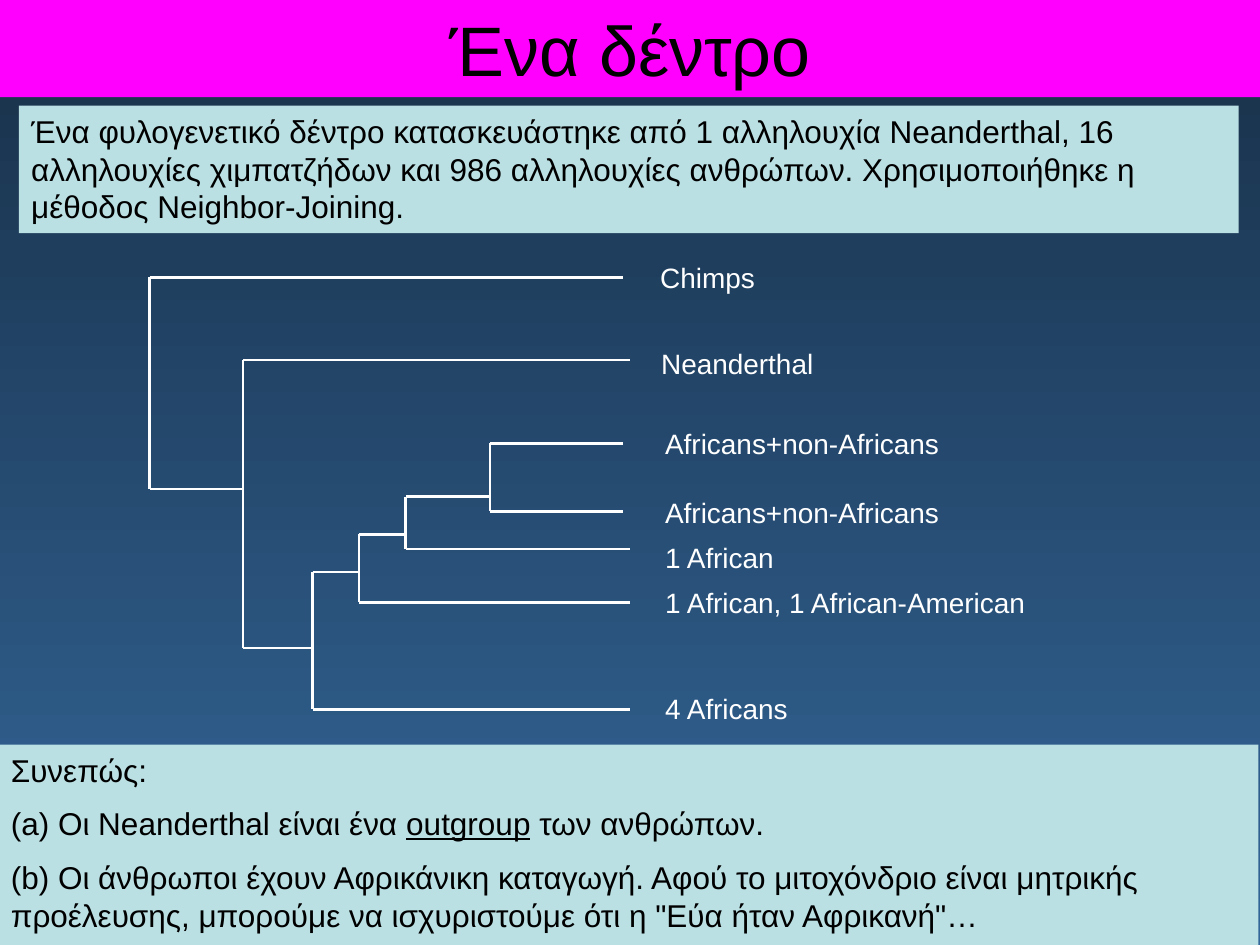
from pptx import Presentation
from pptx.dml.color import RGBColor
from pptx.enum.shapes import MSO_CONNECTOR
from pptx.enum.text import MSO_ANCHOR, PP_ALIGN
from pptx.oxml.ns import qn
from pptx.util import Cm, Pt

BLACK = RGBColor(0x00, 0x00, 0x00)
WHITE = RGBColor(0xFF, 0xFF, 0xFF)
MAGENTA = RGBColor(0xFF, 0x00, 0xFF)
PALE_TEAL = RGBColor(0xBB, 0xE0, 0xE3)
NIGHT_BLUE = RGBColor(0x18, 0x2F, 0x47)
STEEL_BLUE = RGBColor(0x33, 0x66, 0x99)

INTRO = (
    "Ένα φυλογενετικό δέντρο κατασκευάστηκε από 1 αλληλουχία Neanderthal, "
    "16 αλληλουχίες χιμπατζήδων και 986 αλληλουχίες ανθρώπων. "
    "Χρησιμοποιήθηκε η μέθοδος Neighbor-Joining."
)
CONCLUSIONS = [
    "Συνεπώς:",
    "(a) Οι Neanderthal είναι ένα outgroup των ανθρώπων.",
    "(b) Οι άνθρωποι έχουν Αφρικάνικη καταγωγή. Αφού το μιτοχόνδριο είναι "
    "μητρικής προέλευσης, μπορούμε να ισχυριστούμε ότι η \"Εύα ήταν Αφρικανή\"…",
]
LEAVES = [
    ("Chimps", 13.06, 5.13),
    ("Neanderthal", 13.08, 6.86),
    ("Africans+non-Africans", 13.16, 8.48),
    ("Africans+non-Africans", 13.16, 9.86),
    ("1 African", 13.16, 10.77),
    ("1 African, 1 African-American", 13.16, 11.68),
    ("4 Africans", 13.16, 13.82),
]
FORKS = [
    (3.02, (5.59, 12.55), (9.86, 4.9)),
    (4.9, (7.26, 12.7), (13.06, 6.3)),
    (6.3, (11.53, 7.24), (14.3, 12.7)),
    (7.24, (10.77, 8.18), (12.14, 12.7)),
    (8.18, (10.01, 9.88), (11.07, 12.7)),
    (9.88, (8.94, 12.55), (10.31, 12.55)),
]


def write_text(frame, texts, size=18, color=BLACK, align=PP_ALIGN.LEFT, underlined=None):
    """Fill a text frame with one paragraph per text, underlining one word."""
    for index, text in enumerate(texts):
        para = frame.paragraphs[0] if index == 0 else frame.add_paragraph()
        para.alignment = align
        para.space_before = Pt(size / 2 if index else 0)
        for part in text.partition(underlined) if underlined else [text]:
            if part:
                span = para.add_run()
                span.text = part
                span.font.name = "Arial"
                span.font.size = Pt(size)
                span.font.color.rgb = color
                if part == underlined:
                    span.font.underline = True


def fill_solid(shape, color):
    """Give a shape a plain fill."""
    shape.fill.solid()
    shape.fill.fore_color.rgb = color


def paint_background(page):
    """Shade the page from dark at the top to lighter at the bottom."""
    fill = page.background.fill
    fill.gradient()
    fill.gradient_angle = 270
    for stop, color in zip(fill.gradient_stops, (NIGHT_BLUE, STEEL_BLUE)):
        stop.color.rgb = color


def set_title(page, text):
    """Turn the title placeholder into a full-width banner."""
    title = page.shapes.title
    title.left, title.top, title.width, title.height = Cm(0), Cm(0), Cm(25.4), Cm(1.96)
    title.text_frame.vertical_anchor = MSO_ANCHOR.MIDDLE
    fill_solid(title, MAGENTA)
    write_text(title.text_frame, [text], size=40, align=PP_ALIGN.CENTER)


def add_panel(page, left, top, width, height, texts, **text_format):
    """Add a filled box of wrapped text."""
    box = page.shapes.add_textbox(Cm(left), Cm(top), Cm(width), Cm(height))
    box.text_frame.word_wrap = True
    fill_solid(box, PALE_TEAL)
    write_text(box.text_frame, texts, **text_format)


def add_leaf(page, name, left, top):
    """Add the name at the tip of a branch."""
    box = page.shapes.add_textbox(Cm(left), Cm(top), Cm(8), Cm(0.94))
    box.text_frame.word_wrap = False
    write_text(box.text_frame, [name], size=16, color=WHITE)


def add_branch(page, start_x, start_y, end_x, end_y):
    """Add one straight line of the tree."""
    line = page.shapes.add_connector(
        MSO_CONNECTOR.STRAIGHT, Cm(start_x), Cm(start_y), Cm(end_x), Cm(end_y)
    )
    line.line.color.rgb = WHITE
    line.line.width = Pt(1.5)
    properties = line._element.spPr
    properties.append(properties.makeelement(qn("a:effectLst"), {}))


def add_fork(page, x, upper, lower):
    """Add a vertical stem with a branch at each end."""
    add_branch(page, x, upper[0], x, lower[0])
    for y, end_x in (upper, lower):
        add_branch(page, x, y, end_x, y)


def main():
    """Build and save the deck."""
    deck = Presentation()
    deck.slide_width, deck.slide_height = Cm(25.4), Cm(19.05)
    page = deck.slides.add_slide(deck.slide_layouts[5])
    paint_background(page)
    set_title(page, "Ένα δέντρο")
    add_panel(page, 0.38, 2.13, 24.59, 2.57, [INTRO])
    for fork in FORKS:
        add_fork(page, *fork)
    for leaf in LEAVES:
        add_leaf(page, *leaf)
    add_panel(page, -0.03, 15.01, 25.4, 4.11, CONCLUSIONS, underlined="outgroup")
    deck.save("out.pptx")


if __name__ == "__main__":
    main()
